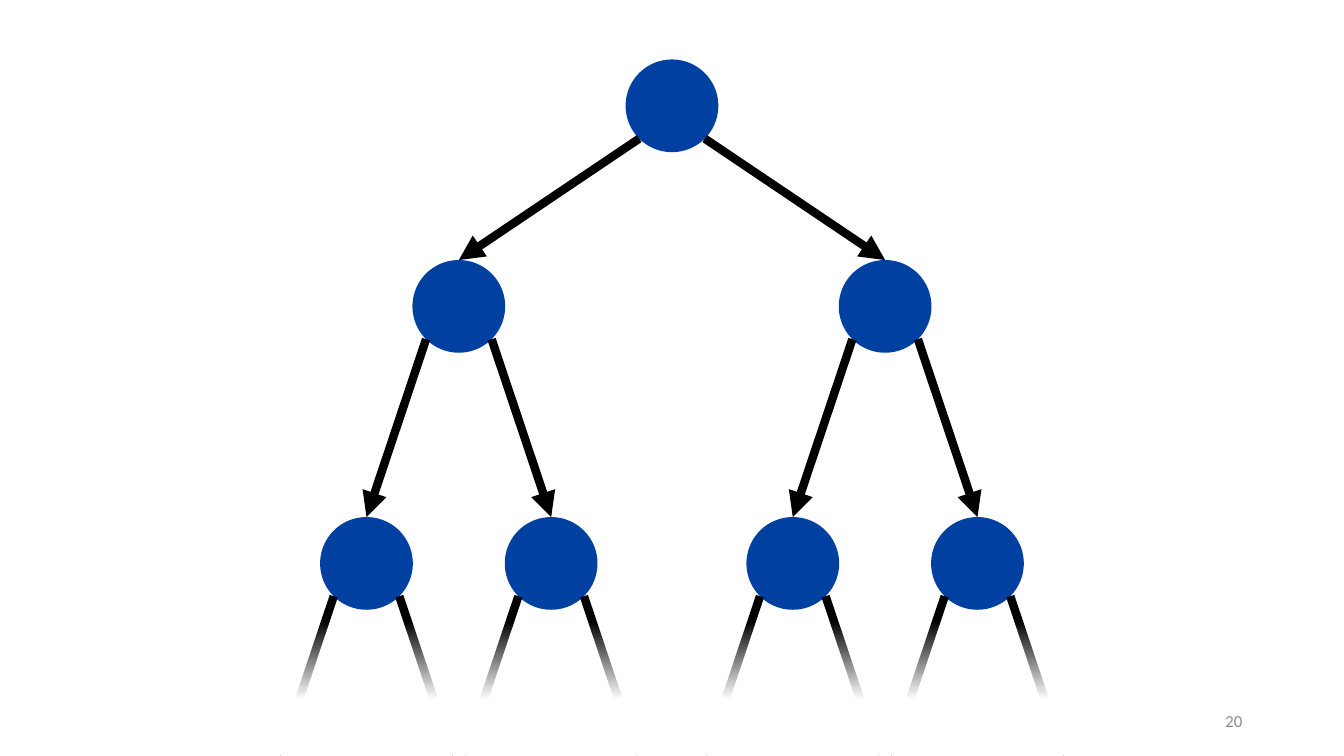
"""Build a slide with a binary tree whose lowest branches fade out."""
from math import sqrt

from lxml import etree
from pptx import Presentation
from pptx import util as u
from pptx.dml.color import RGBColor
from pptx.enum import shapes, text
from pptx.oxml.ns import qn

THEME = {
    "node": RGBColor.from_string("0040A0"),
    "edge": RGBColor.from_string("000000"),
    "paper": RGBColor.from_string("FFFFFF"),
    "number": RGBColor.from_string("8C8C8C"),
    "font": "Calibri",
    "number_size": u.Pt(12),
    "edge_width": u.Pt(6),
}

deck = Presentation()
deck.slide_width, deck.slide_height = u.Inches(13.33), u.Inches(7.5)
page = deck.slides.add_slide(deck.slide_layouts[6])


def across(percent):
    return round(deck.slide_width * percent / 100)


def down(percent):
    return round(deck.slide_height * percent / 100)


box = page.shapes.add_textbox(across(70.67), down(92.67), across(22.5), down(5.33))
box.text_frame.word_wrap = True
box.text_frame.vertical_anchor = text.MSO_ANCHOR.MIDDLE
para = box.text_frame.paragraphs[0]
para.text = "20"
para.alignment = text.PP_ALIGN.RIGHT
para.font.name = THEME["font"]
para.font.size = THEME["number_size"]
para.font.color.rgb = THEME["number"]

diameter = across(6.9)
corner = round(diameter / 2 * sqrt(0.5))
level_tops = [down(7.87), down(34.4), down(68.4), down(100)]
level_spreads = [across(15.86), across(6.87), across(6.42)]

centers = [across(50)]
for top, next_top, spread in zip(level_tops, level_tops[1:], level_spreads):
    children = []
    for center in centers:
        node = page.shapes.add_shape(
            shapes.MSO_SHAPE.OVAL, center - diameter // 2, top, diameter, diameter)
        node.shadow.inherit = False
        node.fill.solid()
        node.fill.fore_color.rgb = THEME["node"]
        node.line.fill.background()
        for side in (-1, 1):
            child = center + side * spread
            edge = page.shapes.add_connector(
                shapes.MSO_CONNECTOR.STRAIGHT,
                center + side * corner, top + diameter // 2 + corner, child, next_top)
            edge.line.color.rgb = THEME["edge"]
            edge.line.width = THEME["edge_width"]
            etree.SubElement(edge.line._get_or_add_ln(), qn("a:tailEnd"), type="triangle")
            etree.SubElement(edge._element.spPr, qn("a:effectLst"))
            children.append(child)
    centers = children

fade_top = down(82.27)
fade = page.shapes.add_shape(
    shapes.MSO_SHAPE.RECTANGLE, across(14.1), fade_top,
    across(71.8), deck.slide_height - fade_top)
fade.shadow.inherit = False
fade.line.fill.background()
fade.fill.gradient()
fade.fill.gradient_angle = 270
for stop, position in zip(fade.fill.gradient_stops, (0, 0.58)):
    stop.color.rgb = THEME["paper"]
    stop.position = position
clear_color = fade._element.spPr.find(".//" + qn("a:srgbClr"))
etree.SubElement(clear_color, qn("a:alpha"), val="0")

deck.save("out.pptx")
